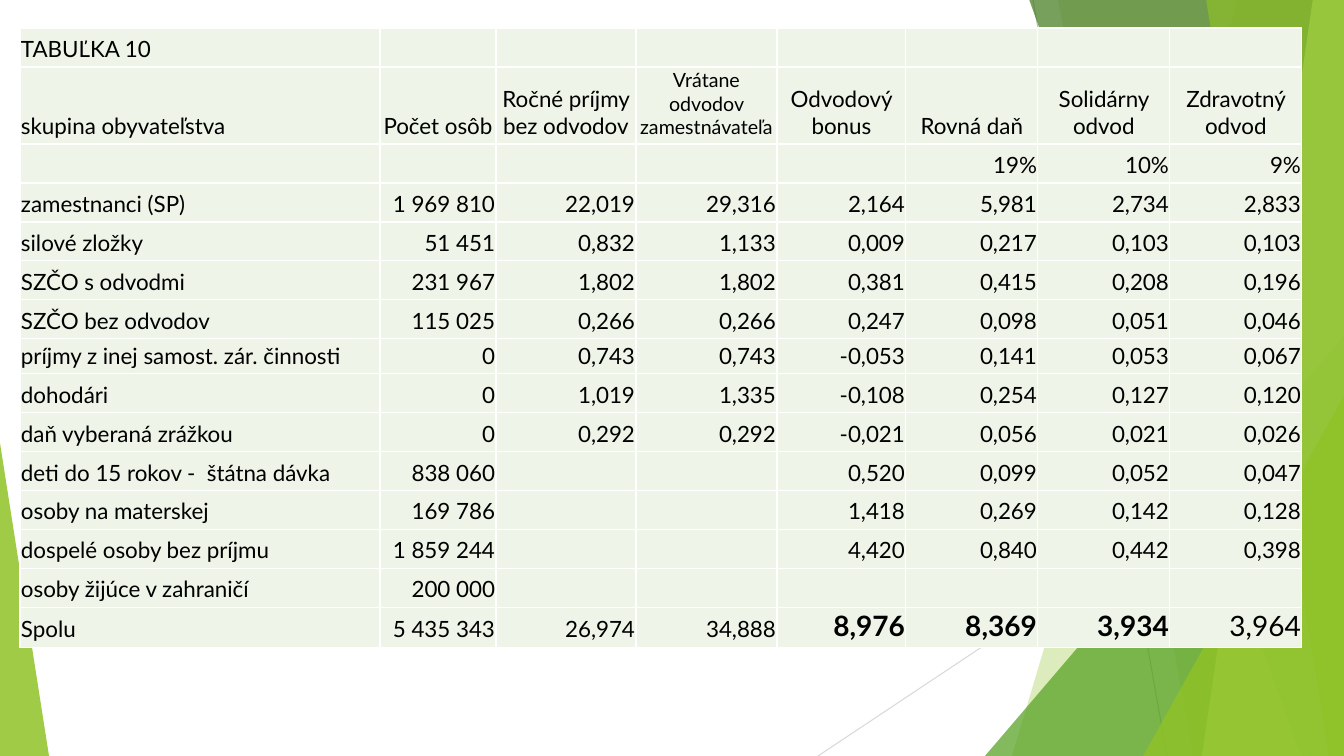
from lxml import etree
from pptx import Presentation
from pptx.dml.color import RGBColor
from pptx.enum.shapes import MSO_CONNECTOR, MSO_SHAPE
from pptx.enum.text import MSO_ANCHOR, PP_ALIGN
from pptx.oxml import parse_xml
from pptx.oxml.ns import nsdecls, qn
from pptx.util import Pt

PX = 914400 / 100.8
STRAIGHT = MSO_CONNECTOR.STRAIGHT
TRIANGLE = MSO_SHAPE.ISOSCELES_TRIANGLE
BOTTOM = MSO_ANCHOR.BOTTOM
LEFT, CENTER, RIGHT = PP_ALIGN.LEFT, PP_ALIGN.CENTER, PP_ALIGN.RIGHT
WIDTH, HEIGHT = 1344, 756


def color(value):
    return RGBColor.from_string(value)


def paint(shape, value, opacity):
    shape.shadow.inherit = False
    shape.line.fill.background()
    shape.fill.solid()
    shape.fill.fore_color.rgb = color(value)
    fill_color = shape.fill._xPr.find(qn("a:solidFill"))[0]
    etree.SubElement(fill_color, qn("a:alpha"), val=str(opacity * 1000))


presentation = Presentation()
presentation.slide_width = round(WIDTH * PX)
presentation.slide_height = round(HEIGHT * PX)
slide = presentation.slides.add_slide(presentation.slide_layouts[6])
shapes = slide.shapes

LINES = [(1033, 0, 1167, 756, "BFBFBF"), (1344, 406, 818, 756, "D9D9D9")]
for *ends, line_color in LINES:
    line = shapes.add_connector(STRAIGHT, *[round(end * PX) for end in ends])
    line.line.color.rgb = color(line_color)
    line.line.width = Pt(0.75)
    etree.SubElement(line._element.spPr, qn("a:effectLst"))

FACETS = [
    ("band", (1238, 1012), "90C226", 30),
    ("band", (1058, 1193), "90C226", 20),
    ("triangle", (985, 336, 359, 420, 1), "54A021", 72),
    ("band", (1029, 1301), "3F7819", 70),
    ("band", (1313, 1202), "C0E474", 70),
    ("band", (1206, 1329), "90C226", 65),
    ("triangle", (1143, 396, 201, 360, 1), "90C226", 80),
    ("triangle", (0, 443, 49, 313, 0), "90C226", 85),
]
for kind, geometry, facet_color, opacity in FACETS:
    if kind == "band":
        top_x, bottom_x = geometry
        builder = shapes.build_freeform(top_x, -1, scale=PX)
        builder.add_line_segments([(WIDTH, -1), (WIDTH, HEIGHT), (bottom_x, HEIGHT)])
        facet = builder.convert_to_shape()
    else:
        *box, apex = geometry
        facet = shapes.add_shape(TRIANGLE, *[round(side * PX) for side in box])
        facet.adjustments[0] = apex
    paint(facet, facet_color, opacity)

ROWS = [
    ["TABUĽKA 10"] + [""] * 7,
    ["skupina obyvateľstva", "Počet osôb ", "Ročné príjmy bez odvodov",
     "Vrátane odvodov zamestnávateľa", "Odvodový bonus", "Rovná daň",
     "Solidárny odvod", "Zdravotný odvod"],
    ["", "", "", "", "", "19%", "10%", "9%"],
    ["zamestnanci (SP)", "1 969 810", "22,019", "29,316", "2,164", "5,981", "2,734", "2,833"],
    ["silové zložky", "51 451", "0,832", "1,133", "0,009", "0,217", "0,103", "0,103"],
    ["SZČO s odvodmi", "231 967", "1,802", "1,802", "0,381", "0,415", "0,208", "0,196"],
    ["SZČO bez odvodov", "115 025", "0,266", "0,266", "0,247", "0,098", "0,051", "0,046"],
    ["príjmy z inej samost. zár. činnosti", "0", "0,743", "0,743", "-0,053", "0,141", "0,053", "0,067"],
    ["dohodári", "0", "1,019", "1,335", "-0,108", "0,254", "0,127", "0,120"],
    ["daň vyberaná zrážkou", "0", "0,292", "0,292", "-0,021", "0,056", "0,021", "0,026"],
    ["deti do 15 rokov -  štátna dávka", "838 060", "", "", "0,520", "0,099", "0,052", "0,047"],
    ["osoby na materskej", "169 786", "", "", "1,418", "0,269", "0,142", "0,128"],
    ["dospelé osoby bez príjmu", "1 859 244", "", "", "4,420", "0,840", "0,442", "0,398"],
    ["osoby žijúce v zahraničí", "200 000"] + [""] * 6,
    ["Spolu", "5 435 343", "26,974", "34,888", "8,976", "8,369", "3,934", "3,964"],
]
COLUMN_WIDTHS = [360, 116, 140, 141, 129, 132, 132, 132]
ROW_HEIGHTS = [39, 77] + [39] * 5 + [35] + [39] * 7
HEADER_ROW, TOTAL_ROW = 1, len(ROWS) - 1

frame = shapes.add_table(
    len(ROWS), len(COLUMN_WIDTHS), round(20 * PX), round(28 * PX),
    round(sum(COLUMN_WIDTHS) * PX), round(sum(ROW_HEIGHTS) * PX))
table = frame.table
table.first_row = False
table.horz_banding = False
for column, width in zip(table.columns, COLUMN_WIDTHS):
    column.width = round(width * PX)
for row, height in zip(table.rows, ROW_HEIGHTS):
    row.height = round(height * PX)

for row_index, texts in enumerate(ROWS):
    for column_index, text in enumerate(texts):
        cell = table.cell(row_index, column_index)
        cell.vertical_anchor = BOTTOM
        cell.margin_left = cell.margin_right = cell.margin_top = round(PX)
        cell.margin_bottom = round(5 * PX)
        properties = cell._tc.get_or_add_tcPr()
        for side in ("lnL", "lnR", "lnT", "lnB"):
            properties.append(parse_xml(
                f'<a:{side} {nsdecls("a")} w="12700"><a:solidFill>'
                f'<a:srgbClr val="FFFFFF"/></a:solidFill></a:{side}>'))
        cell.fill.solid()
        cell.fill.fore_color.rgb = color("EEF4E8")
        if not text:
            continue
        paragraph = cell.text_frame.paragraphs[0]
        if column_index == 0:
            paragraph.alignment = LEFT
        else:
            paragraph.alignment = CENTER if row_index == HEADER_ROW else RIGHT
        run = paragraph.add_run()
        run.text = text
        size = 16
        if row_index == HEADER_ROW and column_index == 3:
            size = 14
        if row_index == TOTAL_ROW and column_index >= 4:
            size = 20
        run.font.size = Pt(size)
        run.font.bold = size == 20 and column_index < 7
        run.font.name = "Lato"
        run.font.color.rgb = color("000000")

presentation.save("out.pptx")
